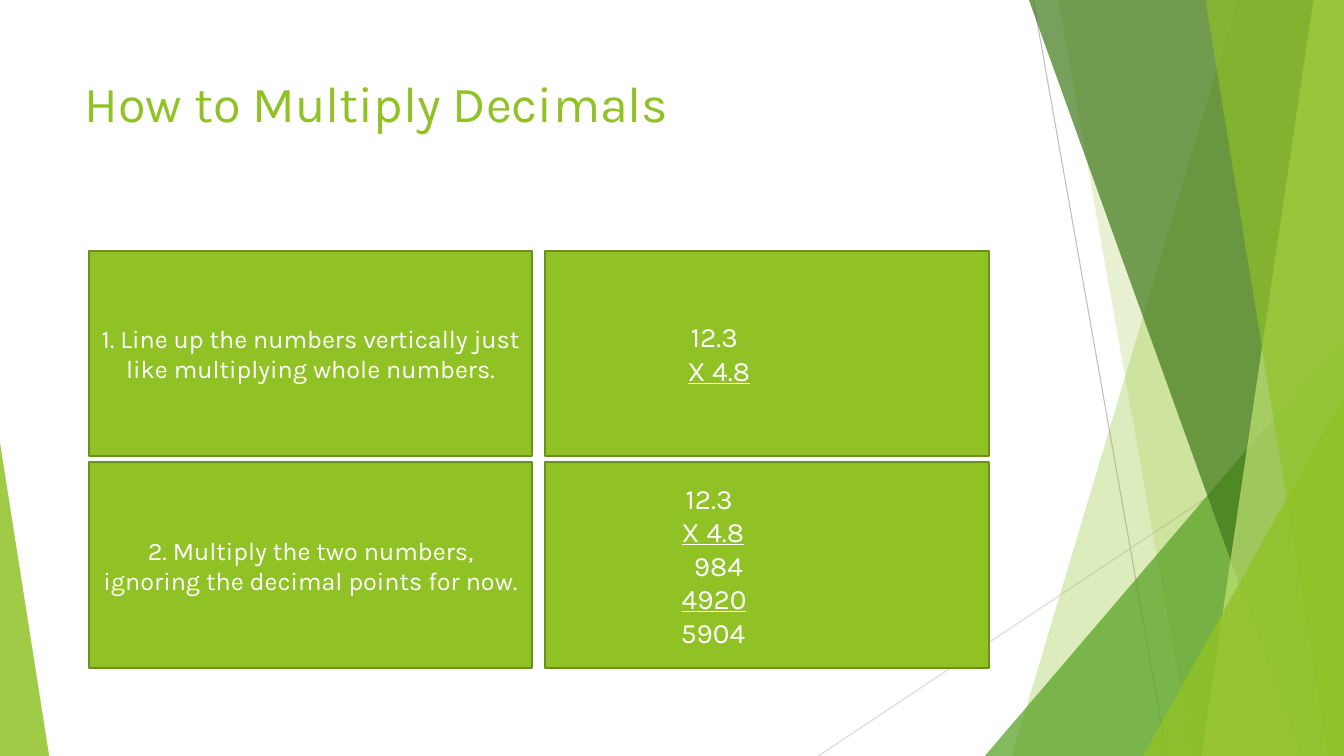
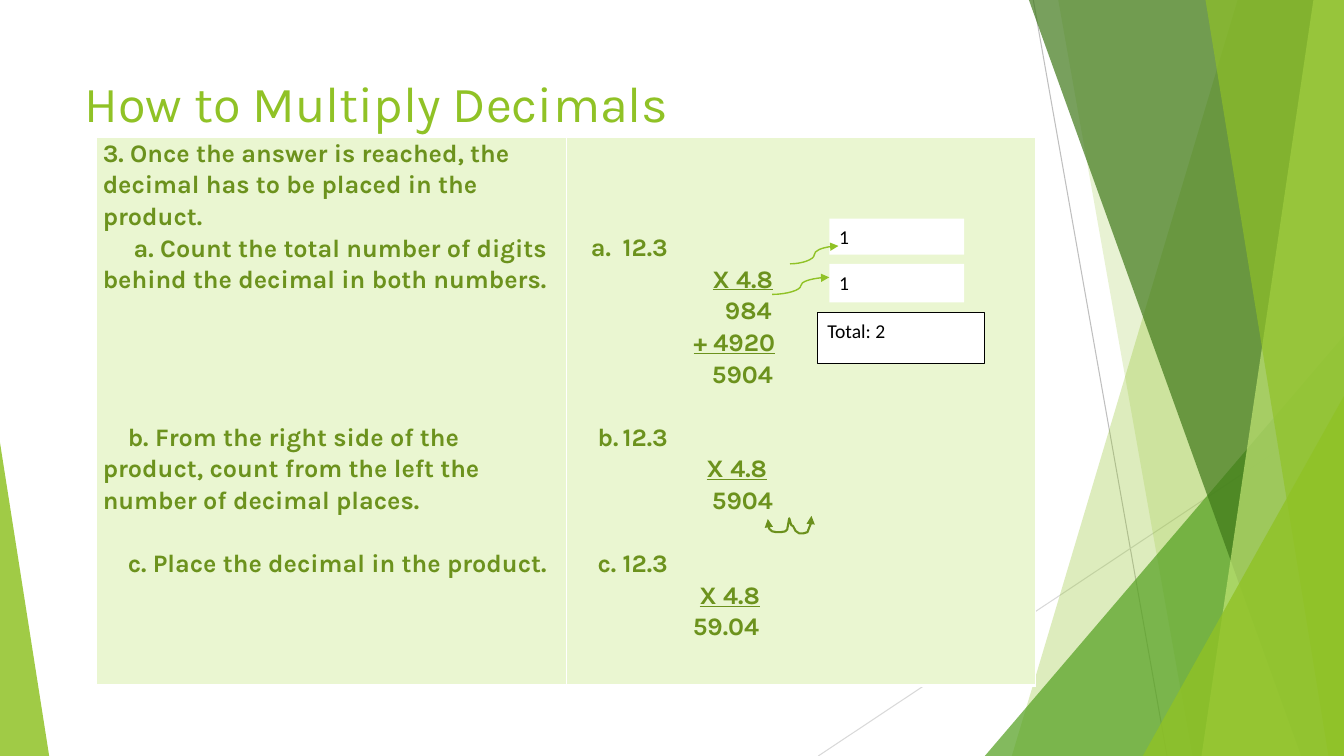
from lxml import etree
from pptx import Presentation
from pptx.dml.color import RGBColor
from pptx.enum.shapes import MSO_CONNECTOR, MSO_SHAPE
from pptx.enum.text import MSO_ANCHOR, MSO_AUTO_SIZE, PP_ALIGN
from pptx.oxml import parse_xml
from pptx.oxml.ns import nsdecls, qn
from pptx.util import Cm, Pt

RECT, TRIANGLE = MSO_SHAPE.RECTANGLE, MSO_SHAPE.ISOSCELES_TRIANGLE
STRAIGHT, CURVE = MSO_CONNECTOR.STRAIGHT, MSO_CONNECTOR.CURVE
TOP, MIDDLE = MSO_ANCHOR.TOP, MSO_ANCHOR.MIDDLE
LEFT, CENTER = PP_ALIGN.LEFT, PP_ALIGN.CENTER

COLORS = {
    "lime": "90C226", "green": "54A021", "forest": "3F7819", "pale": "C0E474",
    "olive": "6B901C", "table_text": "6C921D", "table_fill": "EAF6D1",
    "gray": "BFBFBF", "light_gray": "D9D9D9", "white": "FFFFFF", "black": "000000",
}
W, H = 33.87, 19.05
TITLE = "How to Multiply Decimals"


def paint(sp, fill=None, line=None, width=1, alpha=None, arrows=()):
    """Set fill, outline and arrowheads of a shape or connector, without shadow."""
    if hasattr(sp, "fill"):
        sp.shadow.inherit = False
        if fill:
            sp.fill.solid()
            sp.fill.fore_color.rgb = RGBColor.from_string(COLORS[fill])
        else:
            sp.fill.background()
        if alpha:
            color = sp.element.spPr.find(f"{qn('a:solidFill')}/{qn('a:srgbClr')}")
            etree.SubElement(color, qn("a:alpha")).set("val", str(alpha * 1000))
    if line:
        sp.line.color.rgb = RGBColor.from_string(COLORS[line])
        sp.line.width = Pt(width)
        for end in arrows:
            etree.SubElement(sp.line._get_or_add_ln(), qn(f"a:{end}")).set("type", "triangle")
    else:
        sp.line.fill.background()
    if not hasattr(sp, "fill"):
        etree.SubElement(sp.element.spPr, qn("a:effectLst"))


def write(tf, lines, color, align=LEFT, line_spacing=1.0, **font):
    """Write one paragraph per (text, first-line indent in cm, extras)."""
    for i, (text, indent, extra) in enumerate(lines):
        p = tf.add_paragraph() if i else tf.paragraphs[0]
        p.alignment, p.line_spacing = align, line_spacing
        p.space_before = Pt(extra.get("before", 0))
        pPr = p._p.get_or_add_pPr()
        pPr.set("marL", "0")
        pPr.set("indent", str(Cm(indent)))
        if "tab" in extra:
            tabs = etree.SubElement(pPr, qn("a:tabLst"))
            tab = etree.SubElement(tabs, qn("a:tab"))
            tab.set("pos", str(Cm(extra["tab"])))
            tab.set("algn", "l")
        r = p.add_run()
        r.text = text
        r.font.color.rgb = RGBColor.from_string(COLORS[color])
        for name, value in font.items():
            setattr(r.font, name, value)
        if extra.get("underline"):
            r.font.underline = True


prs = Presentation()
prs.slide_width, prs.slide_height = Cm(W), Cm(H)
layout = prs.slide_layouts[5]

# Shared title style
for ph in list(layout.placeholders)[1:]:
    ph.element.getparent().remove(ph.element)
title = layout.placeholders[0]
box = {"left": 1.88, "top": 1.7, "width": 23.88, "height": 3.66}
for name, value in box.items():
    setattr(title, name, Cm(value))
title.text_frame.vertical_anchor = TOP
title.text_frame.auto_size = MSO_AUTO_SIZE.NONE
title.element.txBody.find(qn("a:lstStyle")).append(parse_xml(
    f'<a:lvl1pPr {nsdecls("a")} algn="l"><a:defRPr sz="3600"><a:solidFill>'
    f'<a:srgbClr val="{COLORS["lime"]}"/></a:solidFill><a:latin typeface="Karla"/>'
    '</a:defRPr></a:lvl1pPr>'))

slides = [prs.slides.add_slide(layout) for _ in range(2)]
for s in slides:
    s.shapes.title.text = TITLE

# Shared backdrop: drawn on the first slide, then moved to the layout
s = slides[0]
for x1, y1, x2, y2, color in [(26.04, 0, 29.41, H, "gray"),
                              (W, 10.24, 20.62, H, "light_gray")]:
    sp = s.shapes.add_connector(STRAIGHT, Cm(x1), Cm(y1), Cm(x2), Cm(y2))
    paint(sp, line=color, width=0.75)

# Bands: top and bottom x of the slanted edge; triangles: left, top, width, apex
backdrop = [
    ("band", (31.19, 25.5), "lime", 30),
    ("band", (26.67, 30.05), "lime", 20),
    ("triangle", (24.82, 8.46, 9.05, 1), "green", 72),
    ("band", (25.93, 32.79), "forest", 70),
    ("band", (33.1, 30.28), "pale", 70),
    ("band", (30.38, 33.48), "lime", 65),
    ("triangle", (28.8, 9.98, 5.07, 1), "lime", 80),
    ("triangle", (0, 11.15, 1.24, 0), "lime", 85),
]
for kind, place, color, alpha in backdrop:
    if kind == "band":
        x_top, x_bottom = place
        fb = s.shapes.build_freeform(Cm(x_top), 0)
        fb.add_line_segments([(Cm(W), 0), (Cm(W), Cm(H)), (Cm(x_bottom), Cm(H))])
        sp = fb.convert_to_shape()
    else:
        x, y, w, apex = place
        sp = s.shapes.add_shape(TRIANGLE, Cm(x), Cm(y), Cm(w), Cm(H - y))
        sp.adjustments[0] = apex
    paint(sp, color, alpha=alpha)
for sp in list(s.shapes)[1:]:
    title.element.addprevious(sp.element)

# Slide 1: two steps, each with its worked example
steps = [
    [("1. Line up the numbers vertically just like multiplying whole numbers.", 0, {})],
    [("12.3", 3.42, {}), ("X 4.8", 3.34, {"underline": True})],
    [("2. Multiply the two numbers, ignoring the decimal points for now.", 0, {})],
    [("12.3", 3.29, {}), ("X 4.8", 3.19, {"underline": True}), ("984", 3.5, {}),
     ("4920", 3.19, {"underline": True}), ("5904", 3.17, {})],
]
for i, lines in enumerate(steps):
    row, col = divmod(i, 2)
    sp = s.shapes.add_shape(RECT, Cm(2.24 + 11.5 * col), Cm(6.32 + 5.33 * row),
                            Cm(11.18), Cm(5.18))
    paint(sp, "lime", "olive", 1.5)
    sp.text_frame.vertical_anchor = MIDDLE
    write(sp.text_frame, lines, "white", LEFT if col else CENTER,
          name="Karla", size=Pt(20 if col else 18))

# Slide 2: table with the instructions and the worked examples
s = slides[1]
LINE = 22.5  # height of a text line in points
cells = [
    (0, [
        ("3. Once the answer is reached, the decimal has to be placed in the product.", 0, {}),
        ("a. Count the total number of digits behind the decimal in both numbers.", 0.78, {}),
        ("b. From the right side of the product, count from the left the number of "
         "decimal places.", 0.63, {"before": 4 * LINE}),
        ("c. Place the decimal in the product.", 0.63, {"before": LINE}),
    ]),
    (3 * LINE, [
        ("a.\t12.3", 0.47, {"tab": 3.7}),
        ("X 4.8", 3.54, {"underline": True}),
        ("984", 3.85, {}),
        ("+ 4920", 3.06, {"underline": True}),
        ("5904", 3.52, {}),
        ("b.\t12.3", 0.64, {"tab": 3.55, "before": LINE}),
        ("X 4.8", 3.39, {"underline": True}),
        ("5904", 3.52, {}),
        ("c.\t12.3", 0.64, {"tab": 3.5, "before": LINE}),
        ("X 4.8", 3.21, {"underline": True}),
        ("59.04", 3.04, {}),
    ]),
]
table = s.shapes.add_table(1, 2, Cm(2.44), Cm(3.45), Cm(23.66), Cm(13.82)).table
table.first_row = table.horz_banding = False
for cell, (top, lines) in zip(table.iter_cells(), cells):
    cell.margin_left = cell.margin_right = Cm(0.15)
    cell.margin_top, cell.margin_bottom = Pt(top), 0
    tcPr = cell._tc.get_or_add_tcPr()
    for side, width in {"L": 1, "R": 1, "T": 1, "B": 3}.items():
        tcPr.append(parse_xml(
            f'<a:ln{side} {nsdecls("a")} w="{Pt(width)}"><a:solidFill>'
            f'<a:srgbClr val="{COLORS["white"]}"/></a:solidFill></a:ln{side}>'))
    cell.fill.solid()
    cell.fill.fore_color.rgb = RGBColor.from_string(COLORS["table_fill"])
    write(cell.text_frame, lines, "table_text", line_spacing=1.07,
          name="Karla", size=Pt(18), bold=True)

# Decimal place counts
for text, x, y, w, h, line in [("1", 20.9, 5.51, 3.4, 0.91, None),
                               ("1", 20.9, 6.65, 3.4, 0.97, None),
                               ("Total: 2", 20.6, 7.87, 4.22, 1.3, "black")]:
    sp = s.shapes.add_shape(RECT, Cm(x), Cm(y), Cm(w), Cm(h))
    paint(sp, "white", line, 0.75)
    sp.text_frame.vertical_anchor = TOP
    write(sp.text_frame, [(text, 0, {})], "black", line_spacing=1.07,
          name="Calibri", size=Pt(14))

# Arrows from the factors to their counts
for x1, y1, x2, y2 in [(19.91, 6.65, 21.13, 6.2), (19.46, 7.42, 20.9, 6.99)]:
    sp = s.shapes.add_connector(CURVE, Cm(x1), Cm(y1), Cm(x2), Cm(y2))
    paint(sp, line="lime", arrows=["tailEnd"])

# Double hop under the product
hops = [(19.35, 13.08), (19.36, 13.23), (19.39, 13.33), (19.46, 13.39), (19.56, 13.41),
        (19.68, 13.41), (19.79, 13.39), (19.84, 13.34), (19.89, 13.06), (19.94, 13.23),
        (19.99, 13.26), (20.05, 13.38), (20.14, 13.44), (20.25, 13.44), (20.35, 13.41),
        (20.4, 13.28), (20.45, 13.16), (20.45, 13)]
points = [(Cm(x), Cm(y)) for x, y in hops]
fb = s.shapes.build_freeform(*points[0])
fb.add_line_segments(points[1:], close=False)
paint(fb.convert_to_shape(), line="olive", width=1.5, arrows=["headEnd", "tailEnd"])

prs.save("out.pptx")
